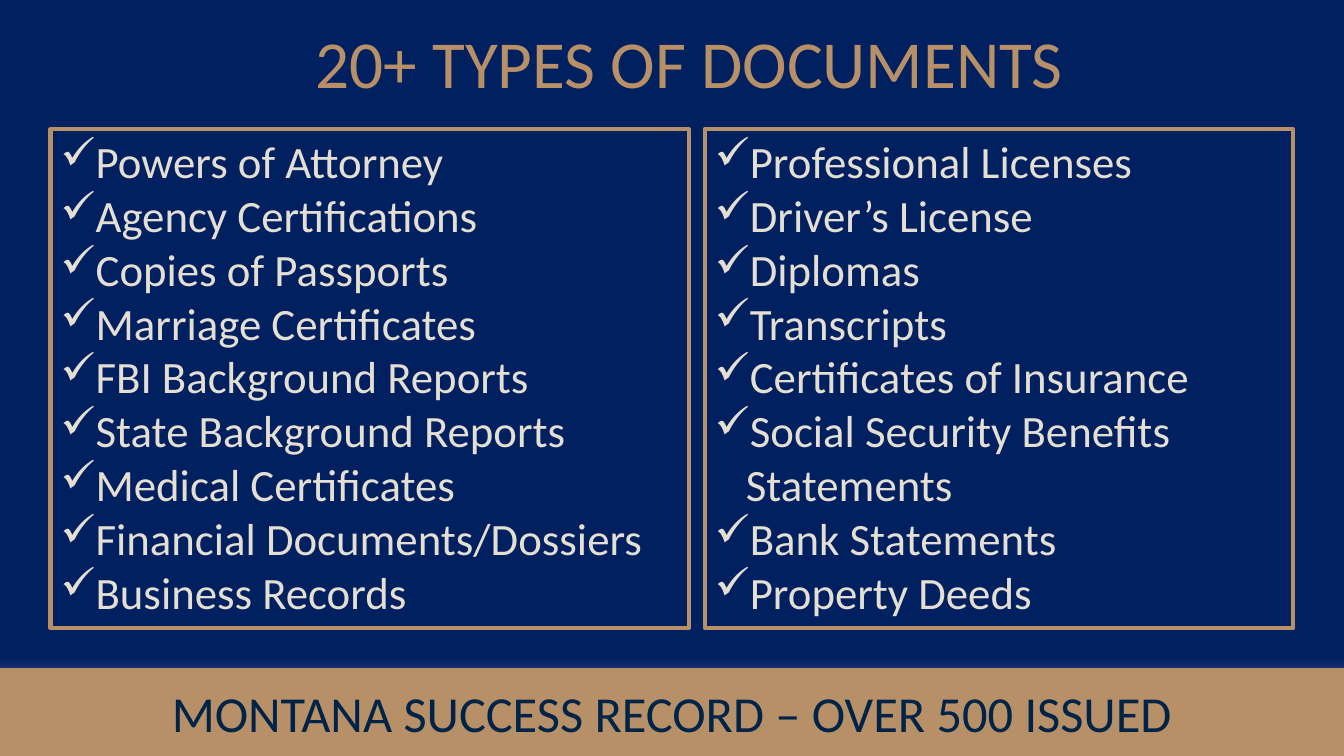
from dataclasses import dataclass

from lxml import etree
from pptx import Presentation
from pptx import util as u
from pptx.dml.color import RGBColor
from pptx.enum import shapes, text
from pptx.oxml.ns import qn


@dataclass(frozen=True)
class Theme:
    font: str = "Calibri"
    navy: str = "002060"
    haze: str = "C7D5ED"
    gold: str = "B89068"
    ink: str = "002447"
    cream: str = "E4DFD2"
    title_size: int = 48
    banner_size: int = 36
    list_size: int = 32
    thin: int = 1
    thick: int = 3


class Deck:
    """Draws on the current slide; boxes are (left, top, width, height) in percent of it."""

    def __init__(self, theme):
        self.theme = theme
        self.prs = Presentation()
        self.prs.slide_width = u.Inches(13.33)
        self.prs.slide_height = u.Inches(7.5)
        self.s = None

    def add_slide(self):
        self.s = self.prs.slides.add_slide(self.prs.slide_layouts[6])
        fill = self.s.background.fill
        fill.gradient()
        fill.gradient_angle = 270
        stops = ((0.87, self.theme.navy), (1, self.theme.haze))
        for stop, (position, color) in zip(fill.gradient_stops, stops):
            stop.position = position
            stop.color.rgb = RGBColor.from_string(color)

    def place(self, box):
        w, h = self.prs.slide_width, self.prs.slide_height
        return [round(share * side / 100) for share, side in zip(box, (w, h, w, h))]

    def set_text(self, sp, lines, size, color, align, anchor, grow=True):
        tf = sp.text_frame
        tf.text = "\n".join(lines)
        tf.word_wrap = True
        tf.vertical_anchor = anchor
        if grow:
            tf.auto_size = text.MSO_AUTO_SIZE.SHAPE_TO_FIT_TEXT
        for p in tf.paragraphs:
            p.alignment = align
            for r in p.runs:
                r.font.name = self.theme.font
                r.font.size = u.Pt(size)
                r.font.color.rgb = RGBColor.from_string(color)

    def rectangle(self, box, line_width, fill=None):
        sp = self.s.shapes.add_shape(shapes.MSO_SHAPE.RECTANGLE, *self.place(box))
        sp.shadow.inherit = False
        if fill:
            sp.fill.solid()
            sp.fill.fore_color.rgb = RGBColor.from_string(fill)
        else:
            sp.fill.background()
        sp.line.color.rgb = RGBColor.from_string(self.theme.gold)
        sp.line.width = u.Pt(line_width)
        return sp

    def title(self, box, words):
        sp = self.s.shapes.add_textbox(*self.place(box))
        self.set_text(sp, [words], self.theme.title_size, self.theme.gold,
                      text.PP_ALIGN.CENTER, text.MSO_ANCHOR.TOP)

    def banner(self, box, words):
        sp = self.rectangle(box, self.theme.thin, self.theme.gold)
        self.set_text(sp, [words], self.theme.banner_size, self.theme.ink,
                      text.PP_ALIGN.CENTER, text.MSO_ANCHOR.MIDDLE, grow=False)

    def checklist(self, box, items):
        sp = self.rectangle(box, self.theme.thick)
        self.set_text(sp, items, self.theme.list_size, self.theme.cream,
                      text.PP_ALIGN.LEFT, text.MSO_ANCHOR.TOP)
        indent = u.Inches(0.31)
        for p in sp.text_frame.paragraphs:
            pPr = p._p.get_or_add_pPr()
            pPr.set("marL", str(indent))
            pPr.set("indent", str(-indent))
            etree.SubElement(pPr, qn("a:buChar")).set("char", "✓")


PERSONAL_AND_BUSINESS = [
    "Powers of Attorney",
    "Agency Certifications",
    "Copies of Passports",
    "Marriage Certificates",
    "FBI Background Reports",
    "State Background Reports",
    "Medical Certificates",
    "Financial Documents/Dossiers",
    "Business Records",
]
LICENSES_AND_STATEMENTS = [
    "Professional Licenses",
    "Driver’s License",
    "Diplomas",
    "Transcripts",
    "Certificates of Insurance",
    "Social Security Benefits Statements",
    "Bank Statements",
    "Property Deeds",
]


def main():
    deck = Deck(Theme())
    deck.add_slide()
    list_top, list_height = 17.07, 66
    deck.banner((0, 88.4, 100, 11.6), "MONTANA SUCCESS RECORD – OVER 500 ISSUED")
    deck.checklist((3.75, list_top, 47.5, list_height), PERSONAL_AND_BUSINESS)
    deck.title((5.63, 2.13, 91.35, 12.13), "20+ TYPES OF DOCUMENTS")
    deck.checklist((52.43, list_top, 43.8, list_height), LICENSES_AND_STATEMENTS)
    deck.prs.save("out.pptx")


if __name__ == "__main__":
    main()
